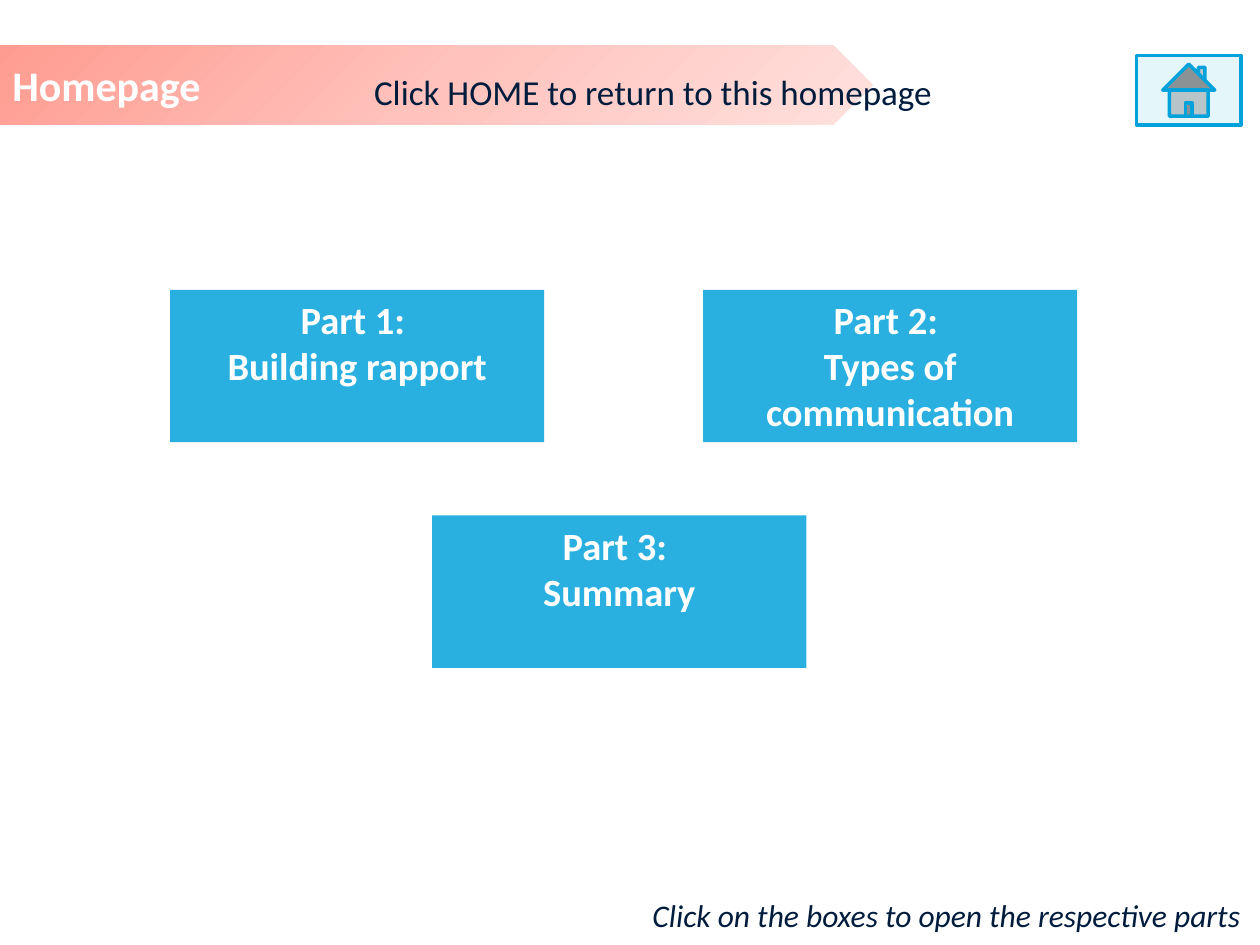
from lxml import etree
from pptx import Presentation
from pptx import util as u
from pptx.dml.color import RGBColor
from pptx.enum import shapes, text
from pptx.oxml.ns import qn

W, H = 10, 7.5
FONT = "Calibri"
COLORS = {
    "navy": "001C3D",
    "white": "FFFFFF",
    "blue": "00A2DB",
    "ice": "E5F6FB",
    "coral": "FF9C91",
    "rose": "FFC2BC",
    "blush": "FFE1DE",
}
BOX_W, BOX_H = 2.97, 1.21
PARTS = [
    (1.35, 2.3, "Building rapport"),
    (5.58, 2.3, "Types of communication"),
    (3.43, 4.09, "Summary"),
]


def rgb(name):
    return RGBColor.from_string(COLORS[name])


def write(sp, lines, size, color="navy", bold=False, italic=False,
          align=text.PP_ALIGN.LEFT, anchor=text.MSO_ANCHOR.TOP, wrap=True):
    tf = sp.text_frame
    tf.word_wrap = wrap
    tf.vertical_anchor = anchor
    for i, line in enumerate(lines):
        p = tf.add_paragraph() if i else tf.paragraphs[0]
        p.alignment = align
        r = p.add_run()
        r.text = line
        r.font.name = FONT
        r.font.size = u.Pt(size)
        r.font.bold = bold
        r.font.italic = italic
        r.font.color.rgb = rgb(color)


def add_shape(slide, kind, box, fill=None, alpha=None, line=None):
    sp = slide.shapes.add_shape(kind, *map(u.Inches, box))
    sp.shadow.inherit = False
    if fill:
        sp.fill.solid()
        sp.fill.fore_color.rgb = rgb(fill)
    if alpha:
        clr = sp.fill._xPr.find(".//" + qn("a:srgbClr"))
        etree.SubElement(clr, qn("a:alpha"), val=str(alpha * 1000))
    if line:
        sp.line.color.rgb = rgb(line)
        sp.line.width = u.Pt(2)
    else:
        sp.line.fill.background()
    return sp


def radial_fill(sp, stops):
    sp.fill.gradient()
    grad = sp._element.spPr.find(qn("a:gradFill"))
    for child in list(grad):
        grad.remove(child)
    gs_list = etree.SubElement(grad, qn("a:gsLst"))
    for pos, name in stops:
        gs = etree.SubElement(gs_list, qn("a:gs"), pos=str(pos * 1000))
        etree.SubElement(gs, qn("a:srgbClr"), val=COLORS[name])
    focus = etree.SubElement(grad, qn("a:path"), path="circle")
    etree.SubElement(focus, qn("a:fillToRect"), r="100000", b="100000")


def add_text(slide, box, line, size, **fmt):
    sp = slide.shapes.add_textbox(*map(u.Inches, box))
    write(sp, [line], size, **fmt)


def add_banner(slide):
    sp = add_shape(slide, shapes.MSO_SHAPE.PENTAGON, (0, 0.36, 6.93, 0.63))
    radial_fill(sp, [(0, "coral"), (50, "rose"), (100, "blush")])
    write(sp, ["Homepage"], 24, color="white", bold=True,
          anchor=text.MSO_ANCHOR.MIDDLE)


def add_part(slide, number, left, top, title):
    sp = add_shape(slide, shapes.MSO_SHAPE.RECTANGLE,
                   (left, top, BOX_W, BOX_H), fill="blue", alpha=84)
    write(sp, [f"Part {number}: ", title], 22, color="white", bold=True,
          align=text.PP_ALIGN.CENTER)


def main():
    prs = Presentation()
    prs.slide_width, prs.slide_height = u.Inches(W), u.Inches(H)
    slide = prs.slides.add_slide(prs.slide_layouts[6])
    add_banner(slide)
    add_text(slide, (2.87, 0.51, 7.05, 0.44),
             "Click HOME to return to this homepage", 20)
    add_shape(slide, shapes.MSO_SHAPE.ACTION_BUTTON_HOME,
              (9.02, 0.44, 0.83, 0.55), fill="ice", line="blue")
    for number, part in enumerate(PARTS, 1):
        add_part(slide, number, *part)
    add_text(slide, (5.08, 7.06, 4.92, 0.4),
             "Click on the boxes to open the respective parts", 18,
             italic=True, wrap=False)
    prs.save("out.pptx")


if __name__ == "__main__":
    main()
